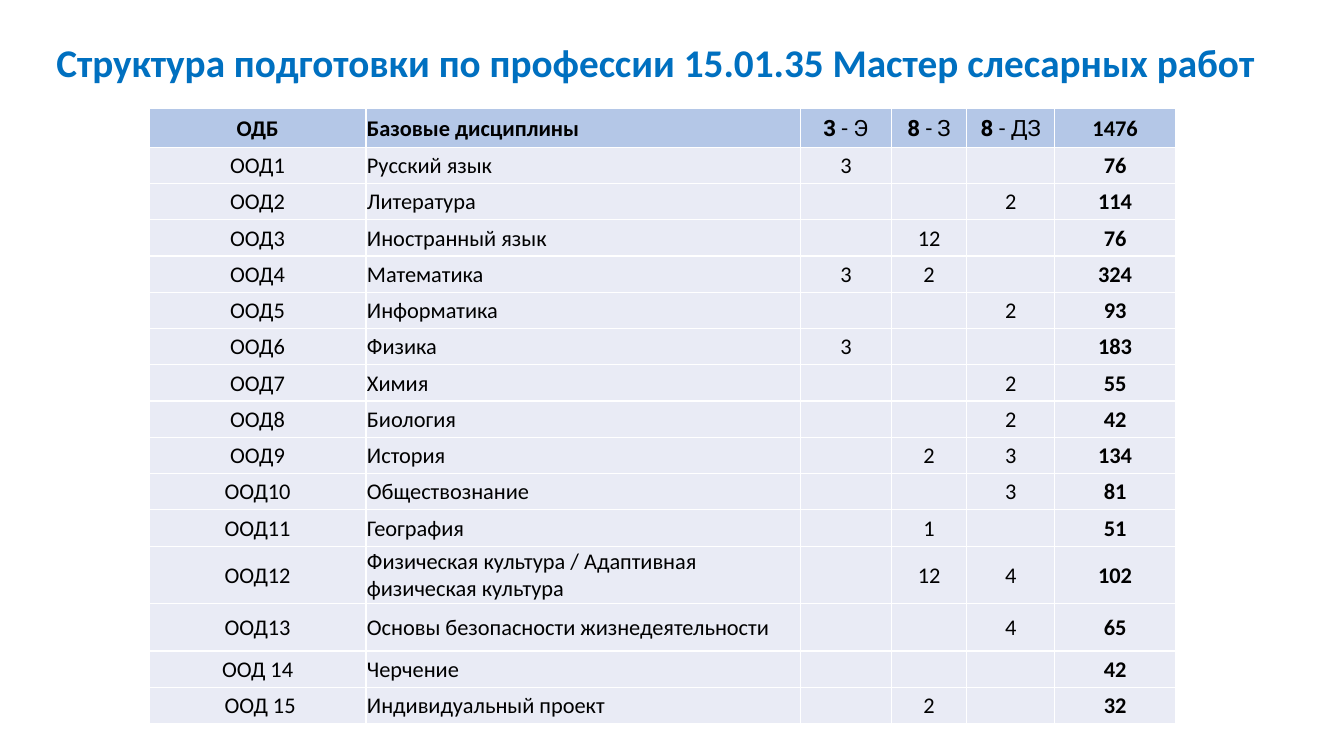
from lxml.etree import SubElement
from pptx import Presentation
from pptx.dml.color import RGBColor
from pptx.enum.text import MSO_ANCHOR, MSO_AUTO_SIZE, PP_ALIGN
from pptx.oxml.ns import qn
from pptx.util import Pt

PX = 9144
COLORS = {
    "title": "0070C0",
    "text": "000000",
    "header": "B4C7E7",
    "row": "E9EBF5",
    "border": "FFFFFF",
}
COLUMN_WIDTHS = [215, 431, 90, 75, 87, 120]
ROW_HEIGHT = 36
SPECIAL_HEIGHTS = {0: 38, 12: 57, 13: 47}
NAME_COLUMN = 1
TOTAL_COLUMN = 5

HEADER = ["ОДБ", "Базовые дисциплины", ("3 ", "- Э"), ("8 ", "- З"), ("8 ", "- ДЗ"), "1476"]
SUBJECTS = [
    ["ООД1", "Русский язык", "3", "", "", "76"],
    ["ООД2", "Литература", "", "", "2", "114"],
    ["ООД3", "Иностранный язык", "", "12", "", "76"],
    ["ООД4", "Математика", "3", "2", "", "324"],
    ["ООД5", "Информатика", "", "", "2", "93"],
    ["ООД6", "Физика", "3", "", "", "183"],
    ["ООД7", "Химия", "", "", "2", "55"],
    ["ООД8", "Биология", "", "", "2", "42"],
    ["ООД9", "История", "", "2", "3", "134"],
    ["ООД10", "Обществознание", "", "", "3", "81"],
    ["ООД11", "География", "", "1", "", "51"],
    ["ООД12", "Физическая культура / Адаптивная физическая культура", "", "12", "4", "102"],
    ["ООД13", "Основы безопасности жизнедеятельности", "", "", "4", "65"],
    ["ООД 14", "Черчение", "", "", "", "42"],
    [" ООД 15", "Индивидуальный проект", "", "2", "", "32"],
]


class CurriculumSlide:
    def __init__(self, presentation):
        self.slide = presentation.slides.add_slide(presentation.slide_layouts[5])

    def style(self, paragraph, size, color, bold, font="Calibri", align=PP_ALIGN.LEFT):
        paragraph.alignment = align
        paragraph.font.name = font
        paragraph.font.size = Pt(size)
        paragraph.font.bold = bold
        paragraph.font.color.rgb = RGBColor.from_string(COLORS[color])

    def title(self, text, left, top, width, height):
        heading = self.slide.shapes.title
        heading.left, heading.top = left * PX, top * PX
        heading.width, heading.height = width * PX, height * PX
        frame = heading.text_frame
        frame.text = text
        frame.auto_size = MSO_AUTO_SIZE.NONE
        frame.vertical_anchor = MSO_ANCHOR.MIDDLE
        frame.paragraphs[0].line_spacing = 0.9
        self.style(frame.paragraphs[0], 28, "title", True)

    def borders(self, cell):
        properties = cell._tc.get_or_add_tcPr()
        for side in ("a:lnL", "a:lnR", "a:lnT", "a:lnB"):
            line = SubElement(properties, qn(side), w=str(Pt(1)))
            fill = SubElement(line, qn("a:solidFill"))
            SubElement(fill, qn("a:srgbClr"), val=COLORS["border"])

    def cell(self, cell, content, fill, bold, align):
        self.borders(cell)
        cell.fill.solid()
        cell.fill.fore_color.rgb = RGBColor.from_string(COLORS[fill])
        cell.margin_left = cell.margin_right = cell.margin_top = PX
        cell.margin_bottom = 0
        cell.vertical_anchor = MSO_ANCHOR.MIDDLE
        paragraph = cell.text_frame.paragraphs[0]
        if isinstance(content, tuple):
            count, assessment = content
            self.style(paragraph, 16, "text", True, "Roboto", align)
            paragraph.add_run().text = count
            kind = paragraph.add_run()
            kind.text = assessment
            kind.font.bold = False
        else:
            self.style(paragraph, 16, "text", bold, align=align)
            if content:
                paragraph.add_run().text = content

    def table(self, rows, left, top):
        heights = [SPECIAL_HEIGHTS.get(index, ROW_HEIGHT) for index in range(len(rows))]
        curriculum = self.slide.shapes.add_table(
            len(rows), len(COLUMN_WIDTHS), left * PX, top * PX,
            sum(COLUMN_WIDTHS) * PX, sum(heights) * PX,
        ).table
        curriculum.first_row = curriculum.horz_banding = False
        for column, width in zip(curriculum.columns, COLUMN_WIDTHS):
            column.width = width * PX
        for row_index, (row, height) in enumerate(zip(rows, heights)):
            curriculum.rows[row_index].height = height * PX
            is_header = row_index == 0
            for column_index, content in enumerate(row):
                self.cell(
                    curriculum.cell(row_index, column_index),
                    content,
                    "header" if is_header else "row",
                    is_header or column_index == TOTAL_COLUMN,
                    PP_ALIGN.LEFT if column_index == NAME_COLUMN else PP_ALIGN.CENTER,
                )


def main():
    presentation = Presentation()
    presentation.slide_width = 1333 * PX
    presentation.slide_height = 750 * PX
    curriculum = CurriculumSlide(presentation)
    curriculum.title("Структура подготовки по профессии 15.01.35 Мастер слесарных работ", 46, 30, 1241, 68)
    curriculum.table([HEADER] + SUBJECTS, 148, 108)
    presentation.save("out.pptx")


if __name__ == "__main__":
    main()
